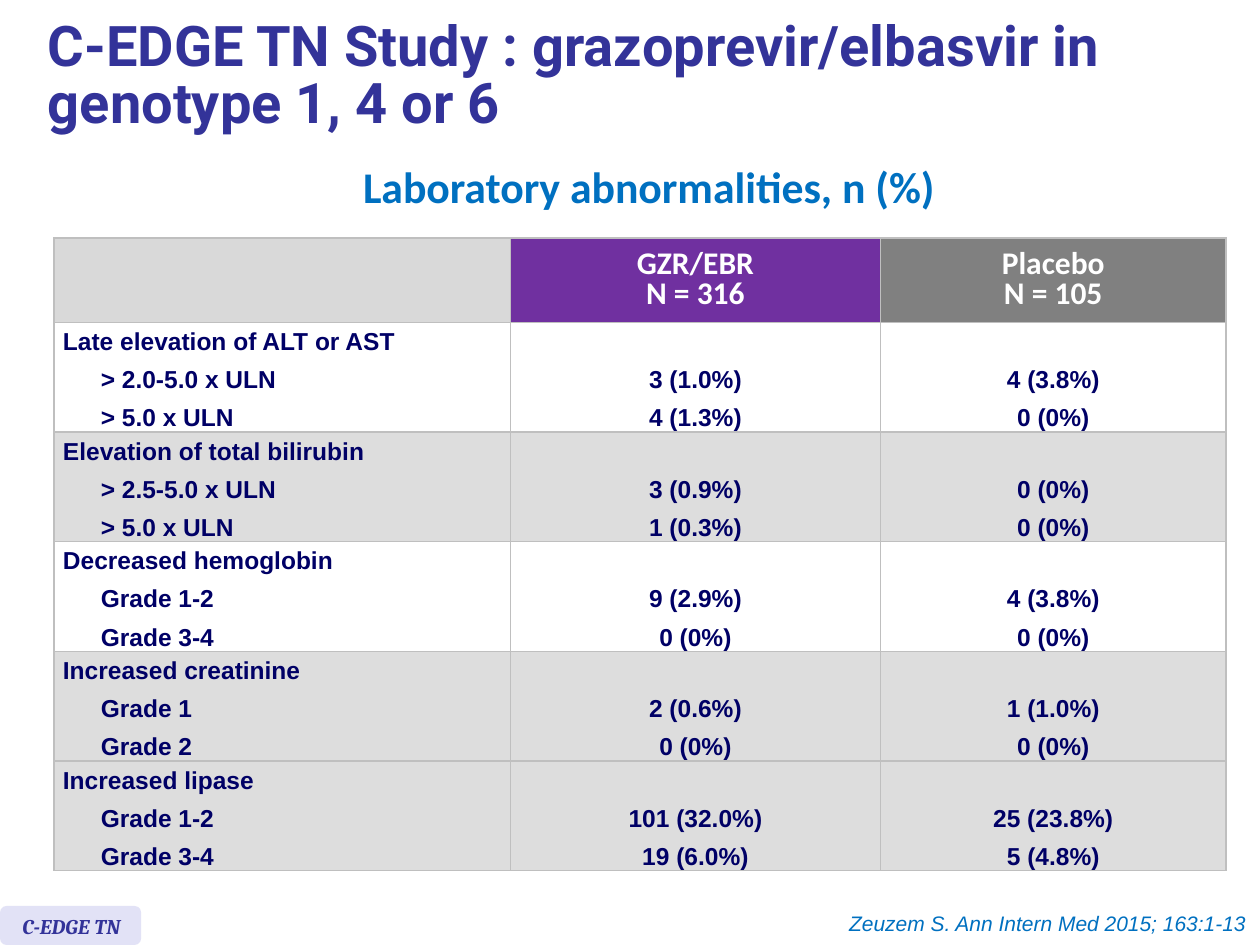
from dataclasses import dataclass

from lxml.etree import SubElement
from pptx import Presentation
from pptx.dml.color import RGBColor
from pptx.enum.shapes import MSO_SHAPE
from pptx.enum.text import MSO_ANCHOR, PP_ALIGN
from pptx.oxml.ns import qn
from pptx.util import Inches, Pt

COLORS = {
    "indigo": "333399",
    "lavender": "E2E2F6",
    "blue": "0070C0",
    "navy": "000066",
    "white": "FFFFFF",
    "purple": "7030A0",
    "gray": "808080",
    "corner": "D9D9D9",
    "band": "DDDDDD",
    "border": "BFBFBF",
}


@dataclass(frozen=True)
class Style:
    font: str
    size: float
    color: str
    bold: bool = True
    italic: bool = False


@dataclass(frozen=True)
class Header:
    lines: tuple[str, ...]
    fill: str


@dataclass(frozen=True)
class Finding:
    name: str
    grades: tuple[str, str]
    treated: tuple[str, str]
    placebo: tuple[str, str]
    fill: str


TITLE = Style("Roboto", 32, "indigo")
SUBTITLE = Style("Calibri", 25, "blue")
TAG = Style("Cambria", 12, "indigo", italic=True)
CITATION = Style("Arial", 12, "blue", bold=False, italic=True)
HEADER = Style("Calibri", 18, "white")
BODY = Style("Arial", 14, "navy")

HEADERS = [
    Header((), "corner"),
    Header(("GZR/EBR", "N = 316"), "purple"),
    Header(("Placebo", "N = 105"), "gray"),
]
FINDINGS = [
    Finding("Late elevation of ALT or AST", ("> 2.0-5.0 x ULN", "> 5.0 x ULN"),
            ("3 (1.0%)", "4 (1.3%)"), ("4 (3.8%)", "0 (0%)"), "white"),
    Finding("Elevation of total bilirubin", ("> 2.5-5.0 x ULN", "> 5.0 x ULN"),
            ("3 (0.9%)", "1 (0.3%)"), ("0 (0%)", "0 (0%)"), "band"),
    Finding("Decreased hemoglobin", ("Grade 1-2", "Grade 3-4"),
            ("9 (2.9%)", "0 (0%)"), ("4 (3.8%)", "0 (0%)"), "white"),
    Finding("Increased creatinine", ("Grade 1", "Grade 2"),
            ("2 (0.6%)", "0 (0%)"), ("1 (1.0%)", "0 (0%)"), "band"),
    Finding("Increased lipase", ("Grade 1-2", "Grade 3-4"),
            ("101 (32.0%)", "19 (6.0%)"), ("25 (23.8%)", "5 (4.8%)"), "band"),
]
COLUMN_WIDTHS = (3.62, 2.94, 2.74)
HEADER_HEIGHT = 0.67
FINDING_HEIGHT = 0.87


def rgb(name: str) -> RGBColor:
    return RGBColor.from_string(COLORS[name])


def add_span(paragraph, text: str, style: Style) -> None:
    span = paragraph.add_run()
    span.text = text
    span.font.name = style.font
    span.font.size = Pt(style.size)
    span.font.bold = style.bold
    span.font.italic = style.italic
    span.font.color.rgb = rgb(style.color)


def add_label(shapes, text: str, style: Style, left: float, top: float, width: float,
              height: float, align: PP_ALIGN = PP_ALIGN.LEFT, wrap: bool = True):
    box = shapes.add_textbox(Inches(left), Inches(top), Inches(width), Inches(height))
    box.text_frame.word_wrap = wrap
    paragraph = box.text_frame.paragraphs[0]
    paragraph.alignment = align
    add_span(paragraph, text, style)
    return paragraph


def format_cell(cell, fill: str, side_margin: float, anchor: MSO_ANCHOR) -> None:
    cell.margin_left = cell.margin_right = Inches(side_margin)
    cell.margin_top = cell.margin_bottom = 0
    cell.vertical_anchor = anchor
    properties = cell._tc.get_or_add_tcPr()
    for side in ("a:lnL", "a:lnR", "a:lnT", "a:lnB"):
        line = SubElement(properties, qn(side), w=str(Pt(1)))
        solid = SubElement(line, qn("a:solidFill"))
        SubElement(solid, qn("a:srgbClr"), val=COLORS["border"])
    cell.fill.solid()
    cell.fill.fore_color.rgb = rgb(fill)


def fill_header(cell, header: Header) -> None:
    format_cell(cell, header.fill, 0.1, MSO_ANCHOR.MIDDLE)
    paragraph = cell.text_frame.paragraphs[0]
    paragraph.alignment = PP_ALIGN.CENTER
    paragraph.line_spacing = 0.8
    for index, text in enumerate(header.lines):
        if index:
            paragraph.add_line_break()
        add_span(paragraph, text, HEADER)


def fill_finding(cell, lines: tuple[str, ...], fill: str, align: PP_ALIGN,
                 indent: float = 0) -> None:
    format_cell(cell, fill, 0.07, MSO_ANCHOR.BOTTOM)
    frame = cell.text_frame
    for index, text in enumerate(lines):
        paragraph = frame.add_paragraph() if index else frame.paragraphs[0]
        paragraph.alignment = align
        paragraph.space_before = Pt(3 if index else 0)
        paragraph.space_after = Pt(3)
        if index and indent:
            paragraph.level = 1
            properties = paragraph._p.get_or_add_pPr()
            properties.set("marL", str(Inches(indent)))
            properties.set("indent", "0")
        add_span(paragraph, text, BODY)


def add_findings_table(page) -> None:
    height = HEADER_HEIGHT + FINDING_HEIGHT * len(FINDINGS)
    frame = page.shapes.add_table(
        len(FINDINGS) + 1, len(HEADERS), Inches(0.43), Inches(1.89),
        Inches(sum(COLUMN_WIDTHS)), Inches(height))
    table = frame.table
    table.first_row = table.horz_banding = False
    for column, width in zip(table.columns, COLUMN_WIDTHS):
        column.width = Inches(width)
    for index, row in enumerate(table.rows):
        row.height = Inches(FINDING_HEIGHT if index else HEADER_HEIGHT)
    for index, header in enumerate(HEADERS):
        fill_header(table.cell(0, index), header)
    for row, finding in enumerate(FINDINGS, start=1):
        fill_finding(table.cell(row, 0), (finding.name, *finding.grades),
                     finding.fill, PP_ALIGN.LEFT, 0.3)
        for column, values in enumerate((finding.treated, finding.placebo), start=1):
            fill_finding(table.cell(row, column), values, finding.fill, PP_ALIGN.CENTER)


def add_title(page, text: str) -> None:
    title = page.shapes.title
    title.left, title.top = Inches(0.28), Inches(0.08)
    title.width, title.height = Inches(9.13), Inches(1.07)
    title.text_frame.vertical_anchor = MSO_ANCHOR.MIDDLE
    paragraph = title.text_frame.paragraphs[0]
    paragraph.alignment = PP_ALIGN.LEFT
    paragraph.line_spacing = 0.85
    add_span(paragraph, text, TITLE)


def add_study_tag(page, text: str) -> None:
    group = page.shapes.add_group_shape()
    badge = group.shapes.add_shape(MSO_SHAPE.ROUNDED_RECTANGLE, 0, Inches(7.19),
                                   Inches(1.12), Inches(0.31))
    badge.shadow.inherit = False
    badge.fill.solid()
    badge.fill.fore_color.rgb = rgb("lavender")
    badge.line.fill.background()
    add_label(group.shapes, text, TAG, 0.08, 7.2, 1.22, 0.3)


def main() -> None:
    deck = Presentation()
    deck.slide_width, deck.slide_height = Inches(10), Inches(7.5)
    page = deck.slides.add_slide(deck.slide_layouts[5])
    add_study_tag(page, "C-EDGE TN")
    add_title(page, "C-EDGE TN Study : grazoprevir/elbasvir in genotype 1, 4 or 6")
    add_findings_table(page)
    subtitle = add_label(page.shapes, "Laboratory abnormalities, n (%)", SUBTITLE,
                         2.75, 1.31, 4.8, 0.45, PP_ALIGN.CENTER, wrap=False)
    subtitle.line_spacing = Pt(23.6)
    add_label(page.shapes, "Zeuzem S. Ann Intern Med 2015; 163:1-13", CITATION,
              5, 7.18, 4.99, 0.3, PP_ALIGN.RIGHT)
    deck.save("out.pptx")


if __name__ == "__main__":
    main()
